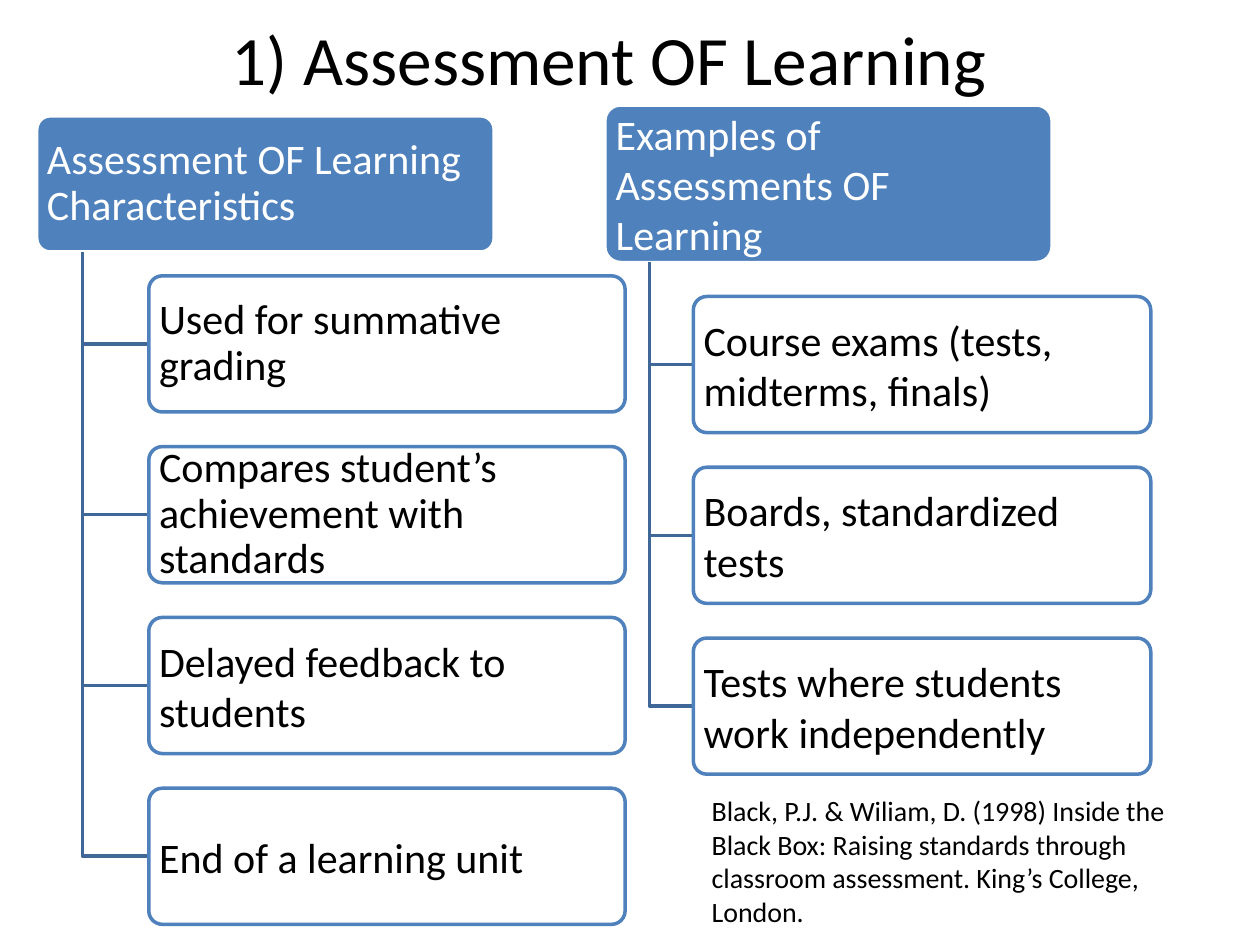
import pptx
import pptx.util
import pptx.dml.color
import pptx.enum.shapes
import pptx.enum.text
from pptx.util import Pt

TITLE = "1) Assessment OF Learning"
CITATION = (
    "Black, P.J. & Wiliam, D. (1998) Inside the Black Box: Raising standards "
    "through classroom assessment. King’s College, London."
)
TREES = [
    {
        "header": ("Assessment OF Learning Characteristics", 0.9),
        "header_box": (21, 66.2, 261.4, 77.8),
        "item_left": 85,
        "item_top": 157.6,
        "item_width": 272.2,
        "items": [
            ("Used for summative grading", 0.9),
            ("Compares student’s achievement with standards", 0.9),
            ("Delayed feedback to students", 1.0),
            ("End of a learning unit", 1.0),
        ],
    },
    {
        "header": ("Examples of Assessments OF Learning", 1.0),
        "header_box": (345.6, 60, 255.6, 90),
        "item_left": 396.2,
        "item_top": 169.4,
        "item_width": 261.4,
        "items": [
            ("Course exams (tests, midterms, finals)", 1.0),
            ("Boards, standardized tests", 1.0),
            ("Tests where students work independently", 1.0),
        ],
    },
]
ITEM_HEIGHT = 77.8
ITEM_PITCH = 97.6
SPINE_RATIO = 0.1

THEME = {
    "font": "Calibri",
    "title_size": 39.6,
    "box_size": 24,
    "citation_size": 16,
    "line_width": 2,
    "text": "000000",
    "white": "FFFFFF",
    "blue": "4F81BD",
    "branch": "3F6797",
}


def color(name):
    return pptx.dml.color.RGBColor.from_string(THEME[name])


def write_text(shape, text, size, text_color, anchor, alignment, spacing=1.0):
    frame = shape.text_frame
    frame.text = text
    frame.word_wrap = True
    frame.vertical_anchor = anchor
    paragraph = frame.paragraphs[0]
    paragraph.alignment = alignment
    paragraph.line_spacing = spacing
    font = paragraph.runs[0].font
    font.name = THEME["font"]
    font.size = Pt(THEME[size])
    font.color.rgb = color(text_color)


def add_text(slide, box, text, size, anchor, alignment):
    shape = slide.shapes.add_textbox(*map(Pt, box))
    write_text(shape, text, size, "text", anchor, alignment)


def add_box(slide, box, content, fill, line, text_color):
    shape = slide.shapes.add_shape(
        pptx.enum.shapes.MSO_SHAPE.ROUNDED_RECTANGLE, *map(Pt, box)
    )
    shape.adjustments[0] = 0.1
    shape.shadow.inherit = False
    shape.fill.solid()
    shape.fill.fore_color.rgb = color(fill)
    shape.line.color.rgb = color(line)
    shape.line.width = Pt(THEME["line_width"])
    frame = shape.text_frame
    frame.margin_left = frame.margin_right = Pt(3.6)
    frame.margin_top = frame.margin_bottom = Pt(2.4)
    text, spacing = content
    write_text(
        shape, text, "box_size", text_color,
        pptx.enum.text.MSO_ANCHOR.MIDDLE, pptx.enum.text.PP_ALIGN.LEFT, spacing,
    )


def add_branch(slide, spine, top, item_left, middle):
    builder = slide.shapes.build_freeform(Pt(spine), Pt(top))
    builder.add_line_segments(
        [(Pt(spine), Pt(middle)), (Pt(item_left), Pt(middle))], close=False
    )
    branch = builder.convert_to_shape()
    branch.shadow.inherit = False
    branch.fill.background()
    branch.line.color.rgb = color("branch")
    branch.line.width = Pt(THEME["line_width"])


def add_tree(slide, tree):
    left, top, width, height = tree["header_box"]
    add_box(slide, tree["header_box"], tree["header"], "blue", "white", "white")
    for index, item in enumerate(tree["items"]):
        item_top = tree["item_top"] + index * ITEM_PITCH
        add_branch(
            slide, left + SPINE_RATIO * width, top + height,
            tree["item_left"], item_top + ITEM_HEIGHT / 2,
        )
        box = (tree["item_left"], item_top, tree["item_width"], ITEM_HEIGHT)
        add_box(slide, box, item, "white", "blue", "text")


def main():
    presentation = pptx.Presentation()
    presentation.slide_width = Pt(720)
    presentation.slide_height = Pt(540)
    slide = presentation.slides.add_slide(presentation.slide_layouts[6])
    anchors = pptx.enum.text.MSO_ANCHOR
    alignments = pptx.enum.text.PP_ALIGN
    add_text(slide, (12.2, 12.2, 671.8, 41.8), TITLE, "title_size",
             anchors.MIDDLE, alignments.CENTER)
    for tree in TREES:
        add_tree(slide, tree)
    add_text(slide, (399.6, 450, 275.8, 85), CITATION, "citation_size",
             anchors.TOP, alignments.LEFT)
    presentation.save("out.pptx")


if __name__ == "__main__":
    main()
